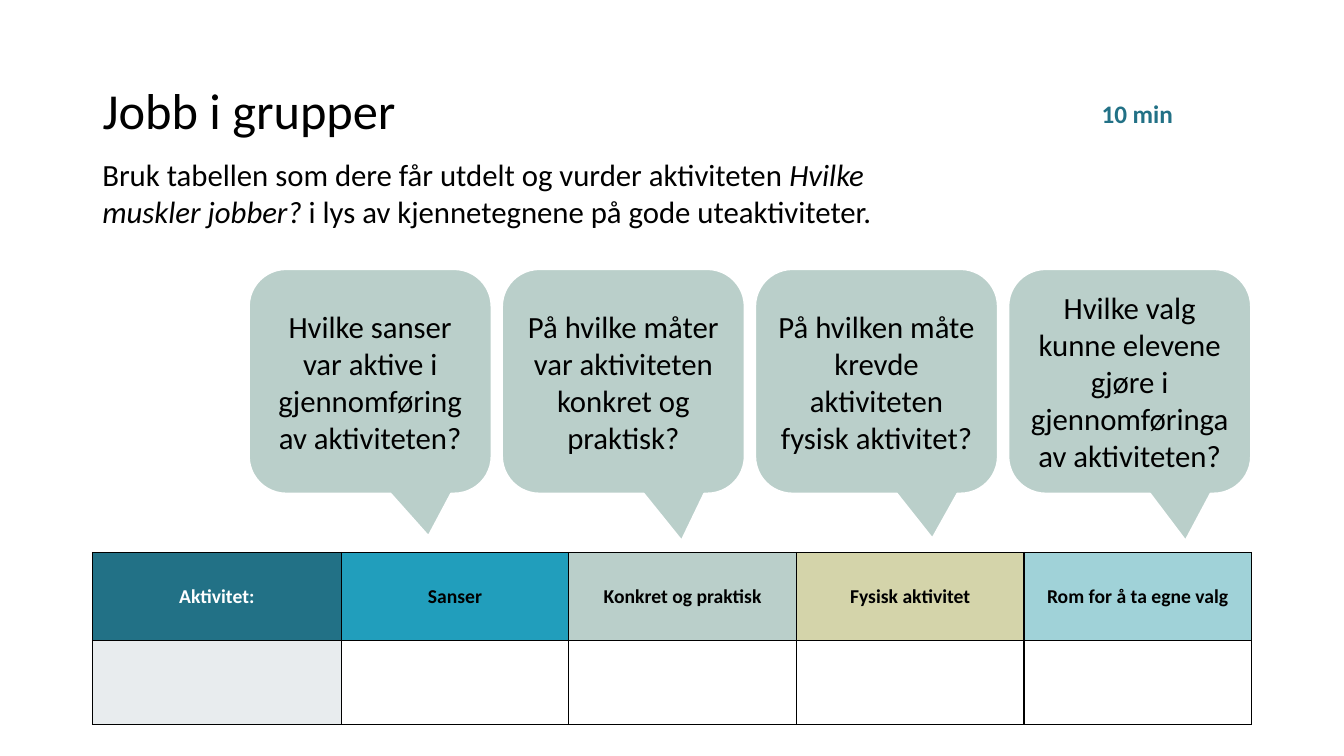
import pptx
import pptx.chart.data
import pptx.dml.color
import pptx.enum.shapes
import pptx.enum.text
import pptx.oxml
import pptx.oxml.ns
import pptx.util

Cm = pptx.util.Cm
Pt = pptx.util.Pt
ALIGN = pptx.enum.text.PP_ALIGN
MIDDLE = pptx.enum.text.MSO_ANCHOR.MIDDLE

COLORS = {
    "black": "000000",
    "white": "FFFFFF",
    "petrol": "227186",
    "blue": "219EBC",
    "sage": "BACFCA",
    "olive": "D4D4AA",
    "aqua": "A0D2D8",
    "grey": "E8ECEE",
}

LEFT, WIDTH = 2.33, 29.21
FIRST_COLUMN, COLUMN = 6.27, 5.735
CALLOUT_LEFT, CALLOUT_TOP, CALLOUT_STEP = 6.27, 6.78, 6.38
CALLOUT_WIDTH, CALLOUT_HEIGHT = 6.12, 5.66

QUESTIONS = [
    ("Hvilke sanser var aktive i gjennomføring av aktiviteten?", 0.24, 0.69),
    ("På hvilke måter var aktiviteten konkret og praktisk?", 0.24, 0.71),
    ("På hvilken måte krevde aktiviteten fysisk aktivitet?", 0.23, 0.7),
    ("Hvilke valg kunne elevene gjøre i gjennomføringa av aktiviteten?", 0.23, 0.71),
]

HEADERS = [
    ("Aktivitet:", "petrol", "white"),
    ("Sanser", "blue", "black"),
    ("Konkret og praktisk", "sage", "black"),
    ("Fysisk aktivitet", "olive", "black"),
    ("Rom for å ta egne valg", "aqua", "black"),
]


def rgb(name):
    """Return the colour with the given name."""
    return pptx.dml.color.RGBColor.from_string(COLORS[name])


class GroupTaskPage:
    """Hold the style and the slide, and add elements to it."""

    def __init__(self, deck, font="Calibri"):
        """Add a title-only slide to the deck."""
        self.font = font
        self.page = deck.slides.add_slide(deck.slide_layouts[5])

    def format_para(self, para, size, color="black", bold=False, align=ALIGN.LEFT, spacing=None):
        """Format a paragraph and all its runs."""
        para.alignment = align
        para.line_spacing = spacing
        for span in para.runs:
            span.font.name = self.font
            span.font.size = Pt(size)
            span.font.bold = bold
            span.font.color.rgb = rgb(color)

    def title(self, text, left, top, width, height):
        """Place and format the title placeholder."""
        box = self.page.shapes.title
        box.left, box.top, box.width, box.height = Cm(left), Cm(top), Cm(width), Cm(height)
        box.text_frame.text = text
        box.text_frame.vertical_anchor = MIDDLE
        self.format_para(box.text_frame.paragraphs[0], 36, spacing=0.9)

    def text(self, parts, left, top, width, height, size, right_inset=0.25, **style):
        """Add a text box from (text, italic) parts."""
        box = self.page.shapes.add_textbox(Cm(left), Cm(top), Cm(width), Cm(height))
        frame = box.text_frame
        frame.word_wrap = True
        frame.margin_right = Cm(right_inset)
        para = frame.paragraphs[0]
        for words, italic in parts:
            span = para.add_run()
            span.text = words
            span.font.italic = italic
        self.format_para(para, size, **style)

    def callout(self, text, left, tip_x, tip_y):
        """Add a rounded speech bubble with its tip at the given offset."""
        box = self.page.shapes.add_shape(
            pptx.enum.shapes.MSO_SHAPE.ROUNDED_RECTANGULAR_CALLOUT,
            Cm(left), Cm(CALLOUT_TOP), Cm(CALLOUT_WIDTH), Cm(CALLOUT_HEIGHT))
        box.adjustments[0], box.adjustments[1] = tip_x, tip_y
        box.shadow.inherit = False
        box.fill.solid()
        box.fill.fore_color.rgb = rgb("sage")
        box.line.color.rgb = rgb("white")
        box.line.width = Pt(1.5)
        box.text_frame.word_wrap = True
        box.text_frame.vertical_anchor = MIDDLE
        box.text_frame.text = text
        self.format_para(box.text_frame.paragraphs[0], 22, align=ALIGN.CENTER)

    def cell(self, cell, fill):
        """Give a table cell its fill, margins and black borders."""
        properties = cell._tc.get_or_add_tcPr()
        for side in ("lnL", "lnR", "lnT", "lnB"):
            properties.append(pptx.oxml.parse_xml(
                f'<a:{side} {pptx.oxml.ns.nsdecls("a")} w="12700"><a:solidFill>'
                f'<a:srgbClr val="{COLORS["black"]}"/></a:solidFill></a:{side}>'))
        cell.fill.solid()
        cell.fill.fore_color.rgb = rgb(fill)
        cell.vertical_anchor = MIDDLE
        cell.margin_left = cell.margin_right = Cm(0.2)
        cell.margin_top = cell.margin_bottom = Cm(0.1)

    def table(self, headers, left, top, width, row_heights):
        """Add the activity table with a header row and an empty row."""
        frame = self.page.shapes.add_table(
            len(row_heights), len(headers), Cm(left), Cm(top), Cm(width), Cm(sum(row_heights)))
        table = frame.table
        table.horz_banding = False
        for row, height in zip(table.rows, row_heights):
            row.height = Cm(height)
        for index, (text, fill, color) in enumerate(headers):
            table.columns[index].width = Cm(COLUMN if index else FIRST_COLUMN)
            header = table.cell(0, index)
            self.cell(header, fill)
            header.text_frame.text = text
            self.format_para(header.text_frame.paragraphs[0], 14, color, True, ALIGN.CENTER, 1.07)
            self.cell(table.cell(1, index), "white" if index else "grey")


def main():
    """Build the slide and save it."""
    deck = pptx.Presentation()
    deck.slide_width, deck.slide_height = Cm(33.87), Cm(19.05)
    page = GroupTaskPage(deck)
    page.title("Jobb i grupper", LEFT, 1.02, WIDTH, 3.68)
    page.text([("10 min", False)], 27.1, 2.44, 3.12, 0.97, 18,
              color="petrol", bold=True, align=ALIGN.CENTER, spacing=0.9)
    page.text([("Bruk tabellen som dere får utdelt og vurder aktiviteten ", False),
               ("Hvilke muskler jobber?", True),
               (" i lys av kjennetegnene på gode uteaktiviteter.", False)],
              LEFT, 3.81, 22.22, 2.13, 22, right_inset=1.5)
    for index, (question, tip_x, tip_y) in enumerate(QUESTIONS):
        page.callout(question, CALLOUT_LEFT + index * CALLOUT_STEP, tip_x, tip_y)
    page.table(HEADERS, LEFT, 13.92, WIDTH, [2.21, 2.13])
    deck.save("out.pptx")


if __name__ == "__main__":
    main()
